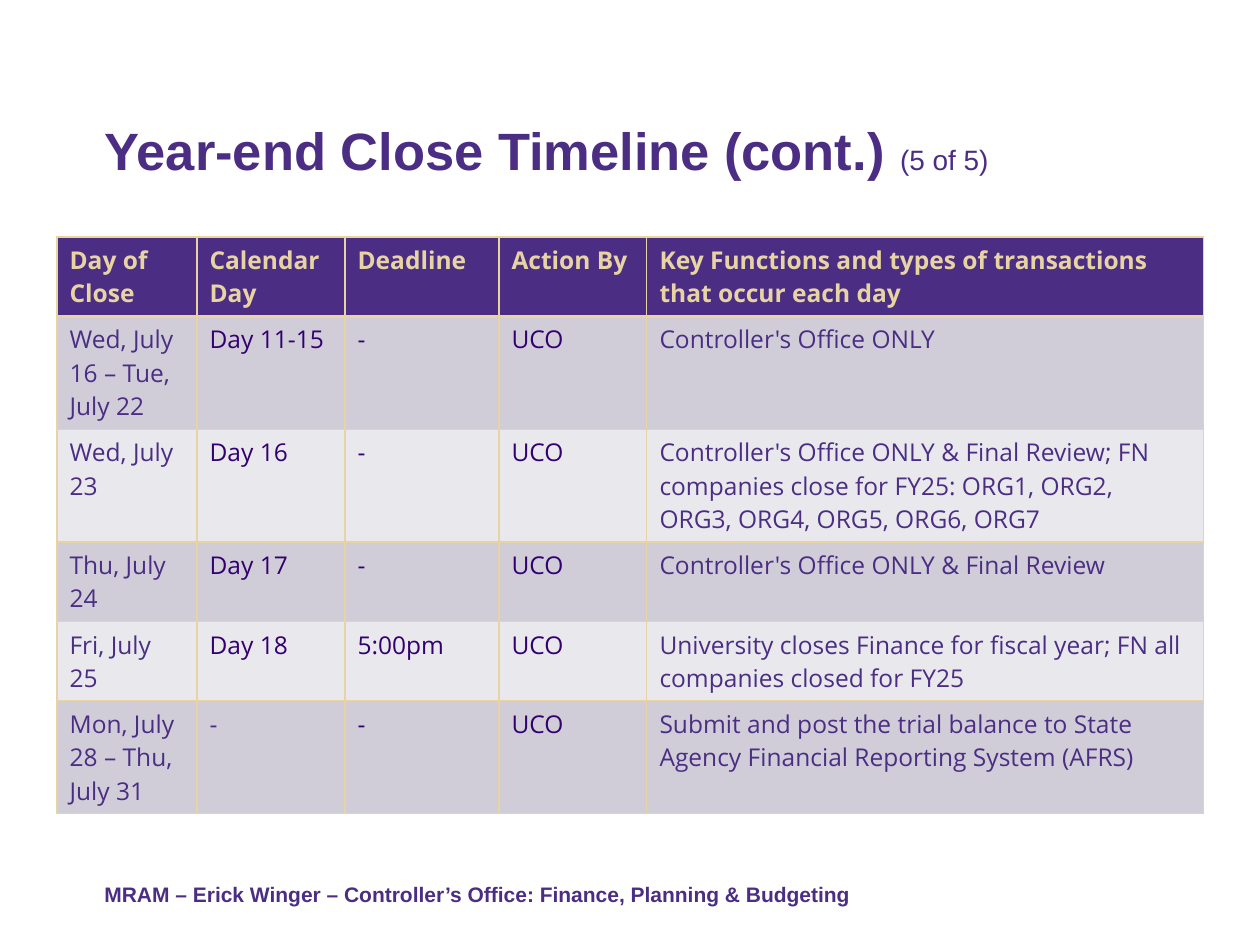
from lxml.etree import SubElement
from pptx import Presentation
from pptx.dml.color import RGBColor
from pptx.enum.text import MSO_ANCHOR, MSO_AUTO_SIZE, PP_ALIGN
from pptx.oxml.ns import qn
from pptx.util import Pt

PX = 7257.14  # EMU per px, 126 px to the inch
PURPLE, DEEP_PURPLE, GOLD = "4B2E83", "33006F", "E8D3A2"
BANDS = ("D0CDD9", "E9E8ED")

COLUMN_WIDTHS = (140, 148, 154, 148, 557)
ROW_HEIGHTS = (76, 62, 58, 62, 62, 62)
TIMELINE = (
    ("Day of Close", "Calendar Day", "Deadline", "Action By",
     "Key Functions and types of transactions that occur each day"),
    ("Wed, July 16 – Tue, July 22", "Day 11-15", "-", "UCO",
     "Controller's Office ONLY"),
    ("Wed, July 23", "Day 16", "-", "UCO",
     "Controller's Office ONLY & Final Review; FN companies close for FY25: "
     "ORG1, ORG2, ORG3, ORG4, ORG5, ORG6, ORG7"),
    ("Thu, July 24", "Day 17", "-", "UCO",
     "Controller's Office ONLY & Final Review"),
    ("Fri, July 25", "Day 18", "5:00pm", "UCO",
     "University closes Finance for fiscal year; FN all companies closed for FY25"),
    ("Mon, July 28 – Thu, July 31", "-", "-", "UCO",
     "Submit and post the trial balance to State Agency Financial Reporting System (AFRS)"),
)


def px(length):
    return round(length * PX)


def color(hex_string):
    return RGBColor.from_string(hex_string)


def text_color(row, column, text):
    if row == 0:
        return GOLD
    if column in (0, 4) or (column == 1 and text == "-"):
        return PURPLE
    return DEEP_PURPLE


class SlideBuilder:
    heading_font = "Arial"
    table_font = "Open Sans"

    def __init__(self, slide):
        self.slide = slide

    def format_run(self, run, size, ink, bold=False, font=None):
        run.font.name = font or self.heading_font
        run.font.size = Pt(size)
        run.font.bold = bold
        run.font.color.rgb = color(ink)

    def place_text(self, shape, box, spacing, runs):
        """Fill a bottom-anchored text shape; runs are (text, size, bold)."""
        shape.left, shape.top, shape.width, shape.height = map(px, box)
        frame = shape.text_frame
        frame.word_wrap = True
        frame.auto_size = MSO_AUTO_SIZE.NONE
        frame.vertical_anchor = MSO_ANCHOR.BOTTOM
        paragraph = frame.paragraphs[0]
        paragraph.alignment = PP_ALIGN.LEFT
        paragraph.line_spacing = spacing
        for text, size, bold in runs:
            run = paragraph.add_run()
            run.text = text
            self.format_run(run, size, PURPLE, bold)

    def title(self, box, runs):
        self.place_text(self.slide.shapes.title, box, 0.9, runs)

    def footer(self, box, text):
        shape = self.slide.shapes.add_textbox(0, 0, 0, 0)
        self.place_text(shape, box, 1.5, [(text, 12, True)])

    def border(self, cell, row):
        """Draw gold edges, with a heavier rule below the header row."""
        heavy_side = {0: "lnB", 1: "lnT"}.get(row)
        properties = cell._tc.get_or_add_tcPr()
        for side in ("lnL", "lnR", "lnT", "lnB"):
            width = Pt(1.9 if side == heavy_side else 0.75)
            line = SubElement(properties, qn(f"a:{side}"), w=str(width))
            fill = SubElement(line, qn("a:solidFill"))
            SubElement(fill, qn("a:srgbClr"), val=GOLD)

    def table(self, left, top, widths, heights, rows):
        frame = self.slide.shapes.add_table(
            len(heights), len(widths), px(left), px(top), px(sum(widths)), px(sum(heights)))
        table = frame.table
        table.horz_banding = False
        for column, width in zip(table.columns, widths):
            column.width = px(width)
        for row_index, (height, texts) in enumerate(zip(heights, rows)):
            table.rows[row_index].height = px(height)
            background = BANDS[(row_index - 1) % 2] if row_index else PURPLE
            for column_index, text in enumerate(texts):
                cell = table.cell(row_index, column_index)
                self.border(cell, row_index)
                cell.fill.solid()
                cell.fill.fore_color.rgb = color(background)
                cell.text_frame.text = text
                self.format_run(cell.text_frame.paragraphs[0].runs[0], 14,
                                text_color(row_index, column_index, text),
                                row_index == 0, self.table_font)


def main():
    presentation = Presentation()
    presentation.slide_width, presentation.slide_height = px(1260), px(945)
    title_only = presentation.slide_layouts[5]
    builder = SlideBuilder(presentation.slides.add_slide(title_only))
    builder.title((92, 52, 1128, 136),
                  [("Year-end Close Timeline (cont.) ", 30, True), ("(5 of 5)", 16, False)])
    builder.footer((92, 868, 997, 45),
                   "MRAM – Erick Winger – Controller’s Office: Finance, Planning & Budgeting")
    builder.table(57, 237, COLUMN_WIDTHS, ROW_HEIGHTS, TIMELINE)
    presentation.save("out.pptx")


if __name__ == "__main__":
    main()
